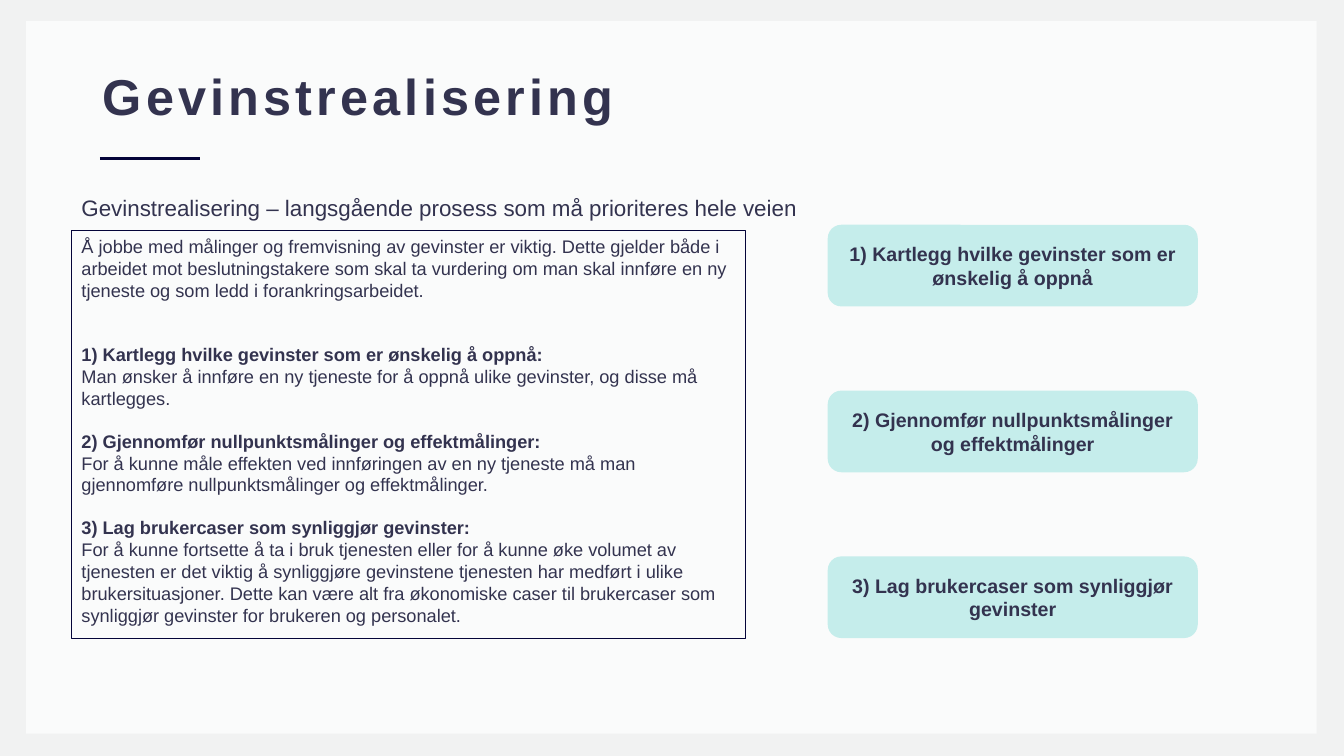
from lxml import etree
from pptx import Presentation
from pptx.dml.color import RGBColor
from pptx.enum.shapes import MSO_CONNECTOR, MSO_SHAPE
from pptx.enum.text import MSO_ANCHOR, PP_ALIGN
from pptx.oxml.ns import qn
from pptx.util import Inches, Pt

RECTANGLE = MSO_SHAPE.RECTANGLE
ROUNDED = MSO_SHAPE.ROUNDED_RECTANGLE
STRAIGHT = MSO_CONNECTOR.STRAIGHT
TOP, MIDDLE = MSO_ANCHOR.TOP, MSO_ANCHOR.MIDDLE
LEFT, CENTER = PP_ALIGN.LEFT, PP_ALIGN.CENTER
TITLE_ONLY = 5

INK, NAVY, MINT = "33334F", "040439", "C5EDEB"
LINE_GAP = 15

INTRO = (
    "Å jobbe med målinger og fremvisning av gevinster er viktig. Dette gjelder både i "
    "arbeidet mot beslutningstakere som skal ta vurdering om man skal innføre en ny "
    "tjeneste og som ledd i forankringsarbeidet."
)
STEPS = [
    ("1) Kartlegg hvilke gevinster som er ønskelig å oppnå",
     "Man ønsker å innføre en ny tjeneste for å oppnå ulike gevinster, og disse må "
     "kartlegges."),
    ("2) Gjennomfør nullpunktsmålinger og effektmålinger",
     "For å kunne måle effekten ved innføringen av en ny tjeneste må man "
     "gjennomføre nullpunktsmålinger og effektmålinger."),
    ("3) Lag brukercaser som synliggjør gevinster",
     "For å kunne fortsette å ta i bruk tjenesten eller for å kunne øke volumet av "
     "tjenesten er det viktig å synliggjøre gevinstene tjenesten har medført i ulike "
     "brukersituasjoner. Dette kan være alt fra økonomiske caser til brukercaser som "
     "synliggjør gevinster for brukeren og personalet."),
]


def color(value):
    return RGBColor.from_string(value)


def place(shape, left, top, width, height):
    bounds = {"left": left, "top": top, "width": width, "height": height}
    for name, value in bounds.items():
        setattr(shape, name, Inches(value))


def write(shape, paragraphs, size, anchor=TOP, align=LEFT):
    """Fill a shape with (text, bold, space before) paragraphs."""
    frame = shape.text_frame
    frame.word_wrap = True
    frame.vertical_anchor = anchor
    for index, (text, bold, space) in enumerate(paragraphs):
        para = frame.paragraphs[0] if index == 0 else frame.add_paragraph()
        para.alignment = align
        para.space_before = Pt(space)
        span = para.add_run()
        span.text = text
        span.font.color.rgb = color(INK)
        for name, value in {"name": "Arial", "size": Pt(size), "bold": bold}.items():
            setattr(span.font, name, value)


def add_box(page, kind, bounds, fill=None, line=None):
    box = page.shapes.add_shape(kind, *map(Inches, bounds))
    box.shadow.inherit = False
    if fill:
        box.fill.solid()
        box.fill.fore_color.rgb = color(fill)
    else:
        box.fill.background()
    if line:
        box.line.color.rgb = color(line)
        box.line.width = Pt(0.75)
    else:
        box.line.fill.background()
    return box


def add_backdrop(page):
    """Grey page with a translucent white panel behind everything else."""
    page.background.fill.solid()
    page.background.fill.fore_color.rgb = color("F1F2F2")
    panel = add_box(page, RECTANGLE, (0.26, 0.21, 12.8, 7.07), fill="FFFFFF")
    white = panel.element.spPr.find(qn("a:solidFill"))[0]
    etree.SubElement(white, qn("a:alpha"), val="70000")
    page.shapes.element.insert(2, panel.element)


def add_title(page, text):
    title = page.shapes.title
    place(title, 0.92, 0.4, 11.5, 1.17)
    write(title, [(text, True, 0)], 36, MIDDLE)
    para = title.text_frame.paragraphs[0]
    para.line_spacing = 0.9
    para.runs[0].font.element.set("spc", "300") if hasattr(
        para.runs[0].font, "element") else para.runs[0]._r.get_or_add_rPr().set("spc", "300")


def add_rule(page):
    ends = map(Inches, (0.99, 1.57, 1.98, 1.57))
    rule = page.shapes.add_connector(STRAIGHT, *ends)
    rule.line.color.rgb = color(NAVY)
    rule.line.width = Pt(2)
    etree.SubElement(rule.element.spPr, qn("a:effectLst"))


def add_description(page):
    paragraphs = [(INTRO, False, 0)]
    for index, (heading, detail) in enumerate(STEPS):
        gap = 2 * LINE_GAP if index == 0 else LINE_GAP
        paragraphs += [(heading + ":", True, gap), (detail, False, 0)]
    box = add_box(page, RECTANGLE, (0.71, 2.29, 6.68, 4.04), line=NAVY)
    write(box, paragraphs, 13)


def add_step_cards(page):
    for index, (heading, _) in enumerate(STEPS):
        bounds = (8.21, 2.23 + index * 1.645, 3.67, 0.81)
        card = add_box(page, ROUNDED, bounds, fill=MINT)
        write(card, [(heading, True, 0)], 14, MIDDLE, CENTER)


def add_subtitle(page, text):
    box = page.shapes.add_textbox(*map(Inches, (0.71, 1.88, 7.5, 0.37)))
    write(box, [(text, False, 0)], 16)


def main():
    deck = Presentation()
    deck.slide_width, deck.slide_height = Inches(13.33), Inches(7.5)
    page = deck.slides.add_slide(deck.slide_layouts[TITLE_ONLY])
    add_backdrop(page)
    add_title(page, "Gevinstrealisering")
    add_rule(page)
    add_description(page)
    add_step_cards(page)
    add_subtitle(page, "Gevinstrealisering – langsgående prosess som må prioriteres hele veien")
    deck.save("out.pptx")


if __name__ == "__main__":
    main()
